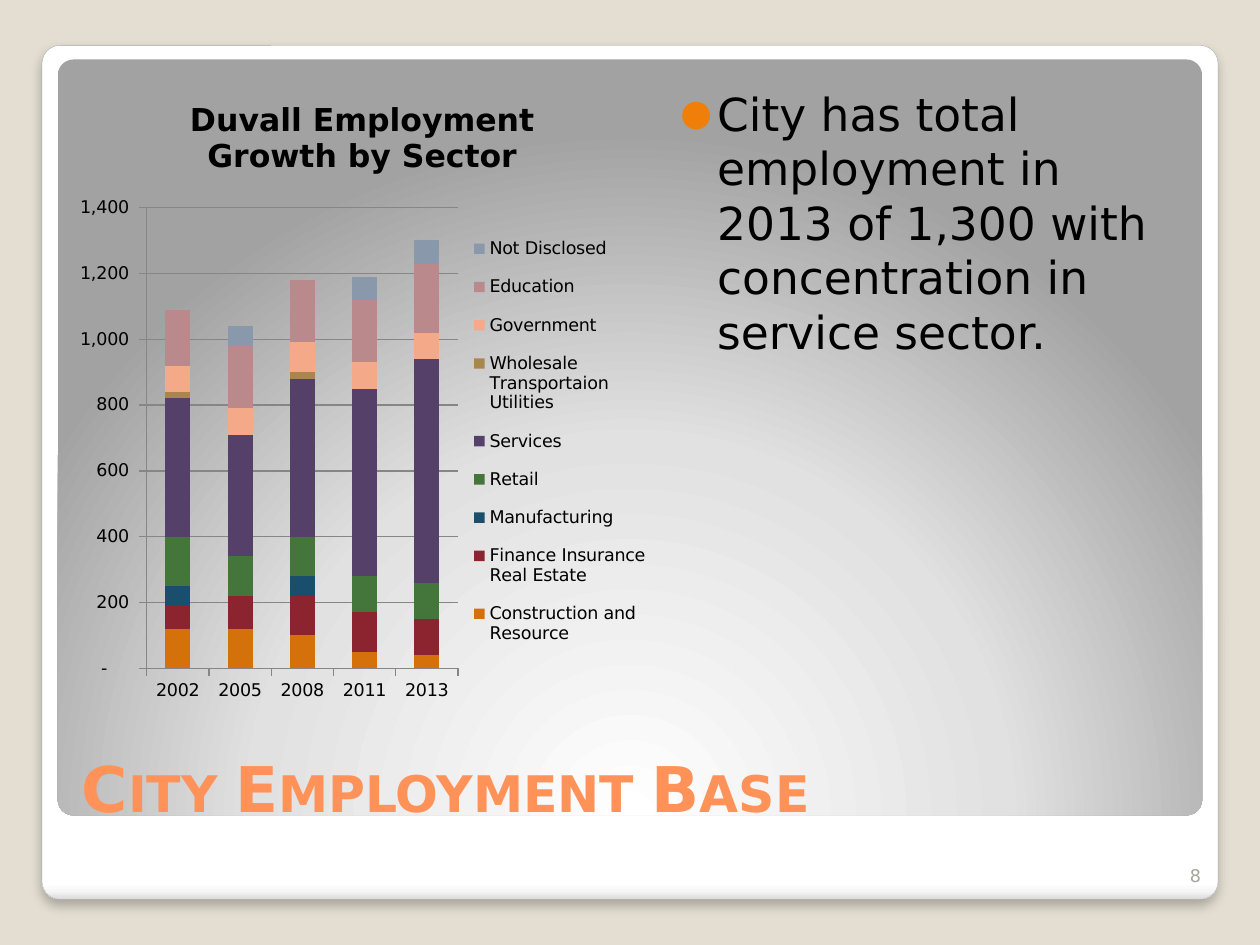
from lxml.etree import SubElement
from pptx import Presentation
from pptx.chart.data import CategoryChartData
from pptx.dml.color import RGBColor
from pptx.enum.chart import XL_CHART_TYPE, XL_LEGEND_POSITION, XL_TICK_MARK
from pptx.enum.shapes import MSO_SHAPE
from pptx.enum.text import MSO_ANCHOR, MSO_AUTO_SIZE, PP_ALIGN
from pptx.oxml import parse_xml
from pptx.oxml.ns import nsdecls, qn
from pptx.util import Pt

COLORS = {
    "backdrop": "E3DED1", "edge": "A4A4A4", "title": "FF9258", "text": "000000",
    "bullet": "F07F09", "number": "A8A49B", "grid": "868686",
}
CARD_STOPS = [(0, "FFFFFF"), (98, "FFFFFF"), (99, "F7F7F7"), (100, "DADADA")]
PANEL_STOPS = [(0, "FFFFFF"), (55, "E1E1E1"), (100, "A2A2A2")]
LINEAR = '<a:lin ang="5400000" scaled="0"/>'
CIRCLE = ('<a:path path="circle"><a:fillToRect l="50000" t="175000" '
          'r="50000" b="-75000"/></a:path>')
SHADOW = (f'<a:effectLst {nsdecls("a")}><a:outerShdw blurRad="76200" dist="50800" '
          'dir="5400000" algn="tl" rotWithShape="0"><a:srgbClr val="000000">'
          '<a:alpha val="25000"/></a:srgbClr></a:outerShdw></a:effectLst>')

YEARS = ["2002", "2005", "2008", "2011", "2013"]
SECTORS = [
    ("Construction and Resource", "D4710A", (120, 120, 100, 50, 40)),
    ("Finance Insurance Real Estate", "8C2430", (70, 100, 120, 120, 110)),
    ("Manufacturing", "194E6C", (60, 0, 60, 0, 0)),
    ("Retail", "44753A", (150, 120, 120, 110, 110)),
    ("Services", "55406A", (420, 370, 480, 570, 680)),
    ("Wholesale Transportaion Utilities", "AA864E", (20, 0, 20, 0, 0)),
    ("Government", "F4A988", (80, 80, 90, 80, 80)),
    ("Education", "BA898B", (170, 190, 190, 190, 210)),
    ("Not Disclosed", "8A98AB", (0, 60, 0, 70, 70)),
]
COUNT_FORMAT = r'_(* #,##0_);_(* \(#,##0\);_(* "-"??_);_(@_)'


def rgb(name):
    return RGBColor.from_string(COLORS.get(name, name))


def set_layout(element, x, y, w, h, inner=False):
    """Fix a chart part at fractions of the chart area."""
    old = element.find(qn("c:layout"))
    if old is not None:
        element.remove(old)
    target = '<c:layoutTarget val="inner"/>' if inner else ""
    sizes = "".join(f'<c:{key} val="{value}"/>'
                    for key, value in zip("xywh", (x, y, w, h)))
    layout = parse_xml(
        f'<c:layout {nsdecls("c")}><c:manualLayout>{target}<c:xMode val="edge"/>'
        f'<c:yMode val="edge"/>{sizes}</c:manualLayout></c:layout>')
    position = element.find(qn("c:legendPos"))
    if position is None:
        element.insert(0, layout)
    else:
        position.addnext(layout)


class SlideBuilder:
    font = "DejaVu Sans"

    def __init__(self, page):
        self.page = page
        page.background.fill.solid()
        page.background.fill.fore_color.rgb = rgb("backdrop")

    def panel(self, at, stops, direction):
        shape = self.page.shapes.add_shape(
            MSO_SHAPE.ROUNDED_RECTANGLE, *map(Pt, at))
        shape.adjustments[0] = 0.021
        shape.shadow.inherit = False
        shape.line.fill.background()
        marks = "".join(f'<a:gs pos="{place * 1000}"><a:srgbClr val="{color}"/></a:gs>'
                        for place, color in stops)
        gradient = parse_xml(f'<a:gradFill {nsdecls("a")} rotWithShape="1"><a:gsLst>'
                             f'{marks}</a:gsLst>{direction}</a:gradFill>')
        shape.element.spPr.find(qn("a:prstGeom")).addnext(gradient)
        return shape

    def card(self, at):
        shape = self.panel(at, CARD_STOPS, LINEAR)
        shape.line.color.rgb = rgb("edge")
        shape.line.width = Pt(0.16)
        properties = shape.element.spPr
        properties.replace(properties.find(qn("a:effectLst")), parse_xml(SHADOW))

    def style(self, font, size, color, bold=False):
        font.name, font.size, font.bold = self.font, Pt(size), bold
        font.color.rgb = rgb(color)

    def text(self, box, at, words, size, color, bold=False, align=PP_ALIGN.LEFT,
             anchor=MSO_ANCHOR.BOTTOM):
        box.left, box.top, box.width, box.height = map(Pt, at)
        frame = box.text_frame
        frame.word_wrap = True
        frame.auto_size = MSO_AUTO_SIZE.NONE
        frame.vertical_anchor = anchor
        para = frame.paragraphs[0]
        para.alignment = align
        span = para.add_run()
        span.text = words
        self.style(span.font, size, color, bold)
        return para, span

    def placeholder(self, index):
        """Bring a template placeholder in front of the panels."""
        box = self.page.placeholders[index]
        box.element.getparent().append(box.element)
        return box

    def title(self, at, words):
        _, span = self.text(self.placeholder(0), at, words, 36, "title", bold=True)
        span.font._element.set("cap", "small")

    def bullet(self, at, words):
        box = self.placeholder(1)
        para, _ = self.text(box, at, words, 26, "text", anchor=MSO_ANCHOR.TOP)
        box.text_frame.margin_left = Pt(14.4)
        box.text_frame.margin_top = Pt(7.2)
        para.space_before = Pt(2.5)
        properties = para._p.get_or_add_pPr()
        properties.set("marL", str(Pt(21)))
        properties.set("indent", str(Pt(-21)))
        color = SubElement(properties, qn("a:buClr"))
        SubElement(color, qn("a:srgbClr"), val=COLORS["bullet"])
        SubElement(properties, qn("a:buSzPct"), val="80000")
        SubElement(properties, qn("a:buFont"), typeface=self.font)
        SubElement(properties, qn("a:buChar"), char="●")

    def page_number(self, at, words):
        box = self.page.shapes.add_textbox(*map(Pt, at))
        self.text(box, at, words, 10, "number", align=PP_ALIGN.RIGHT)

    def stacked_chart(self, at, heading):
        data = CategoryChartData()
        data.categories = YEARS
        for name, _, values in SECTORS:
            data.add_series(name, values)
        chart = self.page.shapes.add_chart(
            XL_CHART_TYPE.COLUMN_STACKED, *map(Pt, at), data).chart
        self.style(chart.font, 10, "text")

        chart.has_title = True
        span = chart.chart_title.text_frame.paragraphs[0].add_run()
        span.text = heading
        self.style(span.font, 18, "text", bold=True)
        chart.chart_title.include_in_layout = False

        chart.has_legend = True
        chart.legend.position = XL_LEGEND_POSITION.RIGHT
        chart.legend.include_in_layout = False
        set_layout(chart.legend._element, 0.68, 0.23, 0.3, 0.69)

        plot = chart.plots[0]
        plot.gap_width, plot.overlap = 150, 100
        plot.vary_by_categories = False
        for series, (_, color, _) in zip(plot.series, SECTORS):
            series.format.fill.solid()
            series.format.fill.fore_color.rgb = rgb(color)

        counts = chart.value_axis
        counts.minimum_scale, counts.maximum_scale, counts.major_unit = 0, 1400, 200
        counts.tick_labels.number_format = COUNT_FORMAT
        counts.tick_labels.number_format_is_linked = False
        counts.has_major_gridlines = True
        for axis in (counts, chart.category_axis):
            axis.major_tick_mark = XL_TICK_MARK.OUTSIDE
            axis.format.line.color.rgb = rgb("grid")
        counts.major_gridlines.format.line.color.rgb = rgb("grid")
        plot_area = chart._chartSpace.chart.plotArea
        set_layout(plot_area, 0.14, 0.21, 0.52, 0.72, inner=True)


def main():
    deck = Presentation()
    deck.slide_width, deck.slide_height = Pt(720), Pt(540)
    slide = SlideBuilder(deck.slides.add_slide(deck.slide_layouts[1]))
    slide.card((24, 26, 672, 488))
    slide.panel((33, 34, 654, 432), PANEL_STOPS, CIRCLE)
    slide.title((39.6, 392.4, 644.4, 82.8), "City Employment Base")
    slide.bullet((374.4, 41.8, 309.6, 345.6),
                 "City has total employment in 2013 of 1,300 with "
                 "concentration in service sector.")
    slide.page_number((657.4, 481, 36, 28.8), "8")
    slide.stacked_chart((36, 41.8, 342, 365.8), "Duvall Employment Growth by Sector")
    deck.save("out.pptx")


if __name__ == "__main__":
    main()
